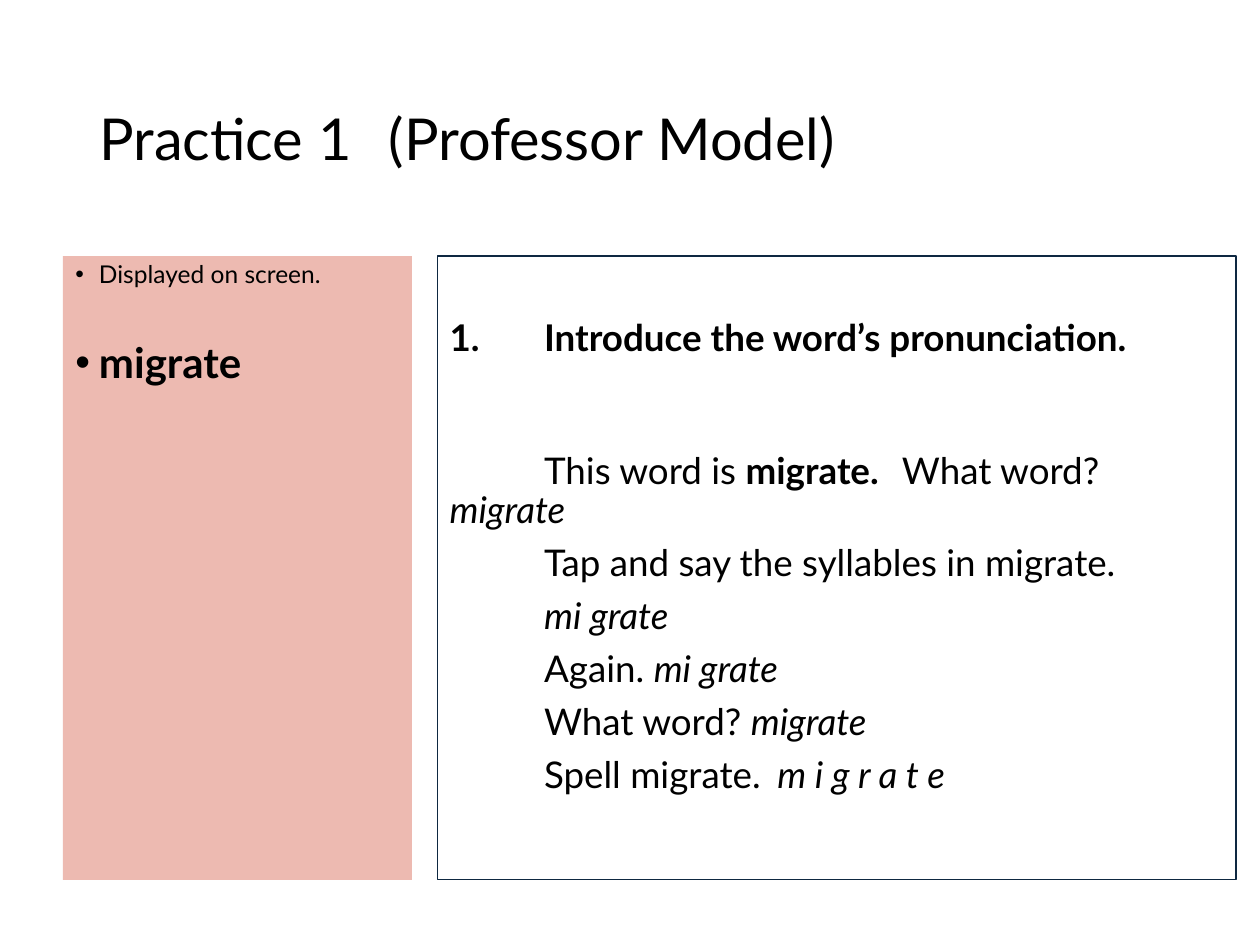
from pptx import Presentation
from pptx.dml.color import RGBColor
from pptx.enum.shapes import MSO_SHAPE as Kind
from pptx.enum.text import MSO_ANCHOR as Anchor, PP_ALIGN as Align
from pptx.util import Inches, Pt
from lxml.etree import SubElement as Sub
from pptx.oxml.ns import qn

CELL = Inches(0.25)
COLS, ROWS = 40, 30
INK, PINK, NAVY = "000000", "EDBAB1", "0E2841"
STEP = 3
SPACE = 19.3


def color(code):
    return RGBColor.from_string(code)


def cells(count):
    return round(count * CELL)


def panel(slide, box, fill=None, line=None):
    shape = slide.shapes.add_shape(Kind.RECTANGLE, *map(cells, box))
    shape.shadow.inherit = False
    if fill:
        shape.fill.solid()
        shape.fill.fore_color.rgb = color(fill)
    else:
        shape.fill.background()
    if line:
        shape.line.color.rgb = color(line)
        shape.line.width = Pt(0.75)
    else:
        shape.line.fill.background()
    frame = shape.text_frame
    frame.word_wrap = True
    frame.vertical_anchor = Anchor.TOP
    return frame


def write(frame, runs, size, bold=False, gap=7.5, left=0, first=0, dot=False):
    fresh = len(frame.paragraphs) == 1 and not frame.paragraphs[0].runs
    para = frame.paragraphs[0] if fresh else frame.add_paragraph()
    para.alignment = Align.LEFT
    para.line_spacing = 0.9
    para.space_before = Pt(gap)
    para.font.name = "Lato"
    para.font.size = Pt(size)
    para.font.bold = bold
    para.font.color.rgb = color(INK)
    props = para._p.get_or_add_pPr()
    props.set("marL", str(cells(left)))
    props.set("indent", str(cells(first)))
    if dot:
        rest = props.find(qn("a:defRPr"))
        rest.addprevious(Sub(props, qn("a:buFont"), typeface="Arial"))
        rest.addprevious(Sub(props, qn("a:buChar"), char="•"))
    for text, style in runs:
        run = para.add_run()
        run.text = text
        if "b" in style:
            run.font.bold = True
        if "i" in style:
            run.font.italic = True
        wide = style.count("w")
        if wide:
            spread = round(wide * SPACE * size)
            run._r.get_or_add_rPr().set("spc", str(spread))


def title(slide, box):
    frame = slide.shapes.add_textbox(*map(cells, box)).text_frame
    frame.word_wrap = True
    frame.vertical_anchor = Anchor.MIDDLE
    runs = [("Practice 1", ""), (" ", "ww"), ("(Professor Model)", "")]
    write(frame, runs, 33, gap=0)


def screen(slide, box):
    frame = panel(slide, box, fill=PINK)
    hang = {"left": 0.75, "first": -0.75, "dot": True}
    write(frame, [("Displayed on screen.", "")], 14, **hang)
    write(frame, [("migrate", "")], 24, bold=True, gap=30.5, **hang)


def script(slide, box):
    frame = panel(slide, box, line=NAVY)
    frame.margin_top = cells(2.03)
    write(frame, [("1.\tIntroduce the word’s pronunciation.", "")], 21,
          bold=True, left=STEP, first=-STEP)
    lines = [
        ([("This word is ", ""), ("migrate.", "b"), (" ", "bww"),
          ("What word? ", ""), ("migrate", "i")], 53),
        ([("Tap and say the syllables in migrate.", "")], 7.5),
        ([("mi grate", "i")], 7.5),
        ([("Again. ", ""), ("mi grate", "i")], 7.5),
        ([("What word? ", ""), ("migrate", "i")], 7.5),
        ([("Spell migrate.", ""), (" ", "w"), ("m i g r a t e", "i")], 7.5),
    ]
    for runs, gap in lines:
        write(frame, runs, 21, gap=gap, first=STEP)


def main():
    deck = Presentation()
    deck.slide_width, deck.slide_height = cells(COLS), cells(ROWS)
    slide = deck.slides.add_slide(deck.slide_layouts[6])
    top, high = 8.13, 19.8
    title(slide, (2.76, 1.6, 34.48, 5.8))
    screen(slide, (2, top, 11.08, high))
    script(slide, (13.88, top, 25.36, high))
    deck.save("out.pptx")


if __name__ == "__main__":
    main()
